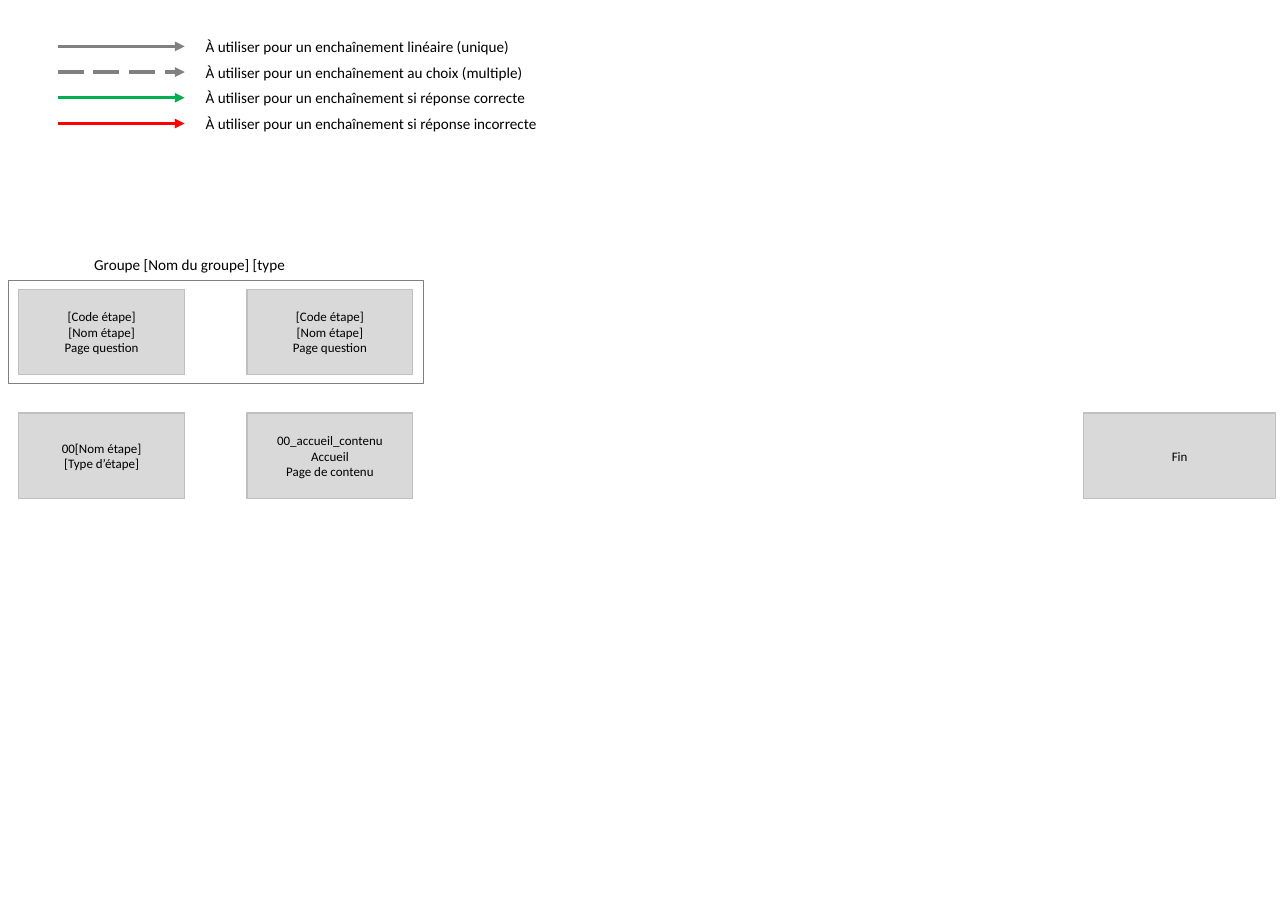
from dataclasses import dataclass

from lxml.etree import SubElement
from pptx import Presentation
from pptx.dml.color import RGBColor
from pptx.enum.dml import MSO_LINE
from pptx.enum.shapes import MSO_CONNECTOR, MSO_SHAPE
from pptx.enum.text import MSO_ANCHOR, PP_ALIGN
from pptx.oxml.ns import qn
from pptx.util import Inches, Pt


@dataclass(frozen=True)
class Theme:
    font: str = "Calibri"
    step_size: int = 12
    label_size: int = 14
    text: str = "000000"
    step_fill: str = "D9D9D9"
    step_line: str = "BFBFBF"
    neutral: str = "808080"
    correct: str = "00B050"
    incorrect: str = "FF0000"
    outline: int = 1
    arrow: int = 3


@dataclass(frozen=True)
class Box:
    left: float
    top: float
    width: float
    height: float

    def inches(self):
        return [Inches(v) for v in (self.left, self.top, self.width, self.height)]


THEME = Theme()
SLIDE_WIDTH, SLIDE_HEIGHT = 16.53, 11.69

# Step grid
GRID_LEFT, GRID_TOP = 0.24, 3.71
STEP_WIDTH, STEP_HEIGHT = 2.13, 1.1
COLUMN_PITCH, ROW_PITCH = 2.93, 1.59
END_WIDTH, RIGHT_MARGIN = 2.46, 0.16

# Group frame around a row of steps
FRAME_PAD_X, FRAME_PAD_Y = 0.13, 0.11
GROUP_LABEL_INDENT, GROUP_LABEL_RISE = 1, 0.37
LABEL_HEIGHT = 0.33

LEGEND = Box(0.74, 0.43, 7.4, 4 * LABEL_HEIGHT)
LEGEND_ARROW_WIDTH, LEGEND_TEXT_INDENT = 1.63, 1.8
LEGEND_ENTRIES = [
    ("À utiliser pour un enchaînement linéaire (unique)", THEME.neutral, None),
    ("À utiliser pour un enchaînement au choix (multiple)", THEME.neutral, MSO_LINE.LONG_DASH),
    ("À utiliser pour un enchaînement si réponse correcte", THEME.correct, None),
    ("À utiliser pour un enchaînement si réponse incorrecte", THEME.incorrect, None),
]

# (column, row, paragraphs), each paragraph being a list of lines
QUESTION = [["[Code étape]", "[Nom étape]"], ["Page question"]]
STEPS = [
    (0, 0, QUESTION),
    (1, 0, QUESTION),
    (0, 1, [["00[Nom étape]"], ["[Type d’étape]"]]),
    (1, 1, [["00_accueil_contenu", "Accueil"], ["Page de contenu"]]),
]


def write_text(frame, paragraphs, size, align):
    frame.word_wrap = True
    frame.vertical_anchor = MSO_ANCHOR.MIDDLE
    for index, lines in enumerate(paragraphs):
        paragraph = frame.paragraphs[0] if index == 0 else frame.add_paragraph()
        paragraph.alignment = align
        for number, line in enumerate(lines):
            if number:
                paragraph.add_line_break()
            run = paragraph.add_run()
            run.text = line
            run.font.name = THEME.font
            run.font.size = Pt(size)
            run.font.color.rgb = RGBColor.from_string(THEME.text)


def add_label(slide, box, text):
    label = slide.shapes.add_textbox(*box.inches())
    write_text(label.text_frame, [[text]], THEME.label_size, PP_ALIGN.LEFT)


def add_rectangle(slide, box, line_color, fill_color=None):
    rectangle = slide.shapes.add_shape(MSO_SHAPE.RECTANGLE, *box.inches())
    rectangle.shadow.inherit = False
    if fill_color:
        rectangle.fill.solid()
        rectangle.fill.fore_color.rgb = RGBColor.from_string(fill_color)
    else:
        rectangle.fill.background()
    rectangle.line.color.rgb = RGBColor.from_string(line_color)
    rectangle.line.width = Pt(THEME.outline)
    return rectangle


def add_arrow(slide, left, middle, width, color, dash):
    arrow = slide.shapes.add_connector(
        MSO_CONNECTOR.STRAIGHT,
        Inches(left), Inches(middle), Inches(left + width), Inches(middle),
    )
    arrow.line.color.rgb = RGBColor.from_string(color)
    arrow.line.width = Pt(THEME.arrow)
    if dash:
        arrow.line.dash_style = dash
    SubElement(arrow.line._get_or_add_ln(), qn("a:tailEnd"), type="triangle")
    SubElement(arrow._element.spPr, qn("a:effectLst"))


def add_legend(slide, box):
    row_height = box.height / len(LEGEND_ENTRIES)
    for row, (text, color, dash) in enumerate(LEGEND_ENTRIES):
        top = box.top + row * row_height
        add_arrow(slide, box.left, top + row_height / 2, LEGEND_ARROW_WIDTH, color, dash)
        text_box = Box(box.left + LEGEND_TEXT_INDENT, top,
                       box.width - LEGEND_TEXT_INDENT, row_height)
        add_label(slide, text_box, text)


def step_box(column, row):
    return Box(GRID_LEFT + column * COLUMN_PITCH, GRID_TOP + row * ROW_PITCH,
               STEP_WIDTH, STEP_HEIGHT)


def add_step(slide, box, paragraphs):
    step = add_rectangle(slide, box, THEME.step_line, THEME.step_fill)
    write_text(step.text_frame, paragraphs, THEME.step_size, PP_ALIGN.CENTER)


def add_group(slide, first, last, name):
    """Frame the steps from first to last and set the group name above them."""
    frame = Box(first.left - FRAME_PAD_X, first.top - FRAME_PAD_Y,
                last.left + last.width - first.left + 2 * FRAME_PAD_X,
                first.height + 2 * FRAME_PAD_Y)
    add_rectangle(slide, frame, THEME.neutral)
    label_box = Box(frame.left + GROUP_LABEL_INDENT, frame.top - GROUP_LABEL_RISE,
                    frame.width - 2 * GROUP_LABEL_INDENT, LABEL_HEIGHT)
    add_label(slide, label_box, name)


def main():
    presentation = Presentation()
    presentation.slide_width = Inches(SLIDE_WIDTH)
    presentation.slide_height = Inches(SLIDE_HEIGHT)
    blank_layout = presentation.slide_layouts.get_by_name("Blank")
    slide = presentation.slides.add_slide(blank_layout)

    add_legend(slide, LEGEND)
    for column, row, paragraphs in STEPS:
        add_step(slide, step_box(column, row), paragraphs)
    add_group(slide, step_box(0, 0), step_box(1, 0), "Groupe [Nom du groupe] [type")
    end_box = Box(SLIDE_WIDTH - RIGHT_MARGIN - END_WIDTH, GRID_TOP + ROW_PITCH,
                  END_WIDTH, STEP_HEIGHT)
    add_step(slide, end_box, [["Fin"]])

    presentation.save("out.pptx")


if __name__ == "__main__":
    main()
